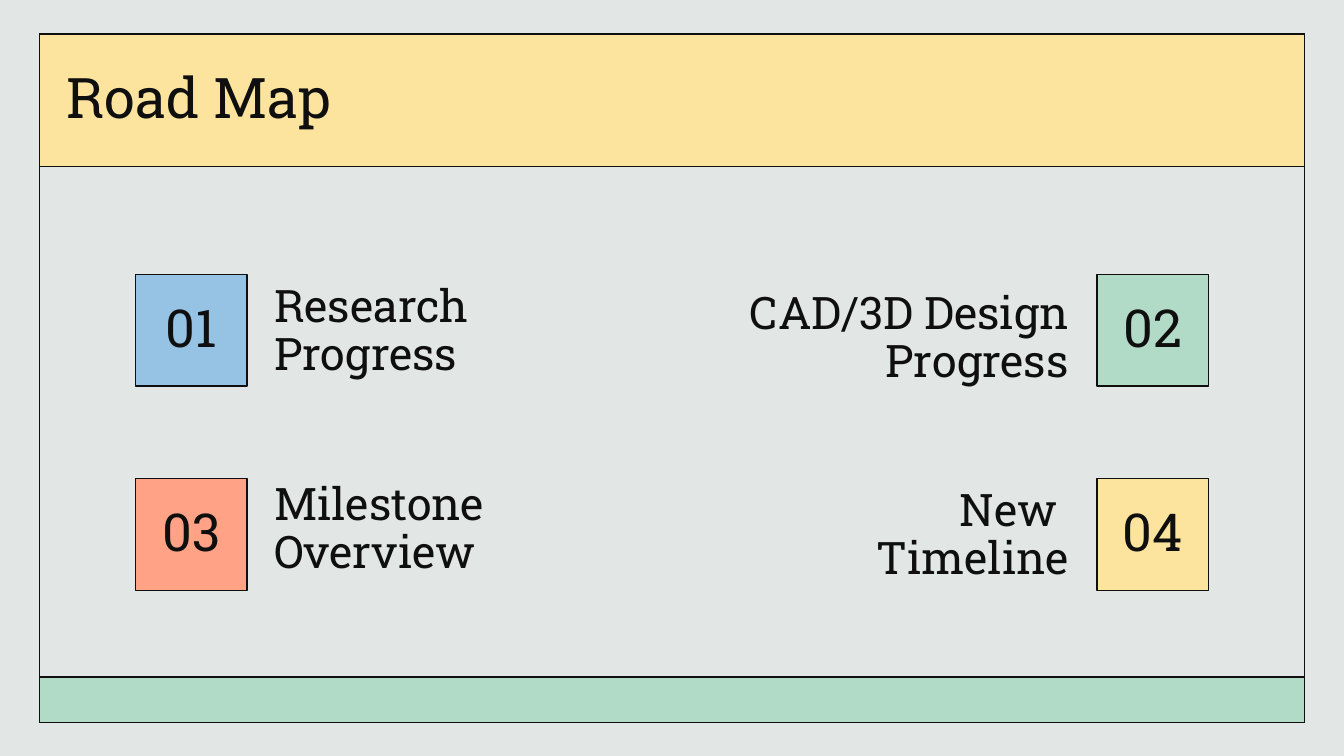
from dataclasses import dataclass

from lxml import etree
from pptx import Presentation
from pptx.dml.color import RGBColor
from pptx.enum.shapes import MSO_SHAPE
from pptx.enum.text import MSO_ANCHOR, MSO_AUTO_SIZE, PP_ALIGN
from pptx.oxml.ns import qn
from pptx.shapes.autoshape import Shape
from pptx.slide import Slide
from pptx.util import Cm, Pt

LEFT, CENTER, RIGHT = PP_ALIGN.LEFT, PP_ALIGN.CENTER, PP_ALIGN.RIGHT
MIDDLE, BOTTOM = MSO_ANCHOR.MIDDLE, MSO_ANCHOR.BOTTOM
NO_AUTOFIT = MSO_AUTO_SIZE.NONE
RECTANGLE = MSO_SHAPE.RECTANGLE

INK = RGBColor(0x0F, 0x0F, 0x0F)
MIST = RGBColor(0xE2, 0xE7, 0xE5)
YELLOW = RGBColor(0xFD, 0xE4, 0x9E)
GREEN = RGBColor(0xB1, 0xDB, 0xC6)
BLUE = RGBColor(0x96, 0xC3, 0xE4)
CORAL = RGBColor(0xFF, 0xA2, 0x86)

FONT = "Roboto Slab"
COMPARISON_LAYOUT = 4
INSET = 0.25

# Lengths in centimetres
FRAME_LEFT, FRAME_TOP, FRAME_WIDTH, FRAME_HEIGHT = 0.75, 0.64, 23.9, 13.02
HEADER_HEIGHT, FOOTER_HEIGHT = 2.51, 0.86
BADGE_SIZE = 2.11
BADGE_LEFTS = {LEFT: 2.56, RIGHT: 20.73}
LABEL_LEFTS = {LEFT: 4.93, RIGHT: 13.26}
LABEL_WIDTH = 7.19
ROW_TOPS = (5.19, 9.05)


@dataclass(frozen=True)
class Topic:
    number: str
    lines: tuple[str, ...]
    color: RGBColor
    row: int
    side: PP_ALIGN
    label_top: float
    label_height: float


TOPICS = (
    Topic("01", ("Research Progress",), BLUE, 0, LEFT, 4.93, 2.51),
    Topic("02", ("CAD/3D Design Progress",), GREEN, 0, RIGHT, 5.18, 2.39),
    Topic("03", ("Milestone Overview",), CORAL, 1, LEFT, 8.79, 2.39),
    Topic("04", ("New ", "Timeline"), YELLOW, 1, RIGHT, 9.32, 1.98),
)


def place(shape: Shape, left: float, top: float, width: float, height: float) -> None:
    shape.left, shape.top = Cm(left), Cm(top)
    shape.width, shape.height = Cm(width), Cm(height)


def paint(shape: Shape, color: RGBColor | None) -> None:
    """Outline the shape in ink and fill it, or leave it hollow without a colour."""
    if color is None:
        shape.fill.background()
    else:
        shape.fill.solid()
        shape.fill.fore_color.rgb = color
    shape.line.color.rgb = INK
    shape.line.width = Pt(0.75)


def write(shape: Shape, lines: tuple[str, ...], size: int, align: PP_ALIGN,
          anchor: MSO_ANCHOR, left_inset: float = INSET) -> None:
    frame = shape.text_frame
    frame.word_wrap = True
    frame.auto_size = NO_AUTOFIT
    frame.vertical_anchor = anchor
    frame.margin_left = Cm(left_inset)
    frame.margin_top = frame.margin_right = frame.margin_bottom = Cm(INSET)
    for index, line in enumerate(lines):
        para = frame.add_paragraph() if index else frame.paragraphs[0]
        para.alignment = align
        para.line_spacing = 0.9
        para.space_before = Pt(0)
        span = para.add_run()
        span.text = line
        span.font.name = FONT
        span.font.size = Pt(size)
        span.font.bold = False
        span.font.color.rgb = INK


def remove_bullets(shape: Shape) -> None:
    for para in shape.text_frame.paragraphs:
        properties = para._p.get_or_add_pPr()
        properties.set("marL", "0")
        properties.set("indent", "0")
        etree.SubElement(properties, qn("a:buNone"))


def add_box(page: Slide, left: float, top: float, width: float, height: float,
            color: RGBColor | None) -> Shape:
    box = page.shapes.add_shape(RECTANGLE, Cm(left), Cm(top), Cm(width), Cm(height))
    box.shadow.inherit = False
    paint(box, color)
    return box


def draw_topic(page: Slide, topic: Topic, label: Shape) -> None:
    place(label, LABEL_LEFTS[topic.side], topic.label_top, LABEL_WIDTH, topic.label_height)
    write(label, topic.lines, 24, topic.side, BOTTOM)
    remove_bullets(label)
    badge = add_box(page, BADGE_LEFTS[topic.side], ROW_TOPS[topic.row],
                    BADGE_SIZE, BADGE_SIZE, topic.color)
    write(badge, (topic.number,), 28, CENTER, MIDDLE)


def main() -> None:
    deck = Presentation()
    deck.slide_width, deck.slide_height = Cm(25.4), Cm(14.29)
    page = deck.slides.add_slide(deck.slide_layouts[COMPARISON_LAYOUT])
    page.background.fill.solid()
    page.background.fill.fore_color.rgb = MIST

    title, *labels = page.placeholders
    add_box(page, FRAME_LEFT, FRAME_TOP, FRAME_WIDTH, FRAME_HEIGHT, None)
    footer_top = FRAME_TOP + FRAME_HEIGHT - FOOTER_HEIGHT
    add_box(page, FRAME_LEFT, footer_top, FRAME_WIDTH, FOOTER_HEIGHT, GREEN)

    place(title, FRAME_LEFT, FRAME_TOP, FRAME_WIDTH, HEADER_HEIGHT)
    paint(title, YELLOW)
    write(title, ("Road Map",), 30, LEFT, MIDDLE, left_inset=2 * INSET)

    for topic, label in zip(TOPICS, labels):
        draw_topic(page, topic, label)
    deck.save("out.pptx")


if __name__ == "__main__":
    main()
